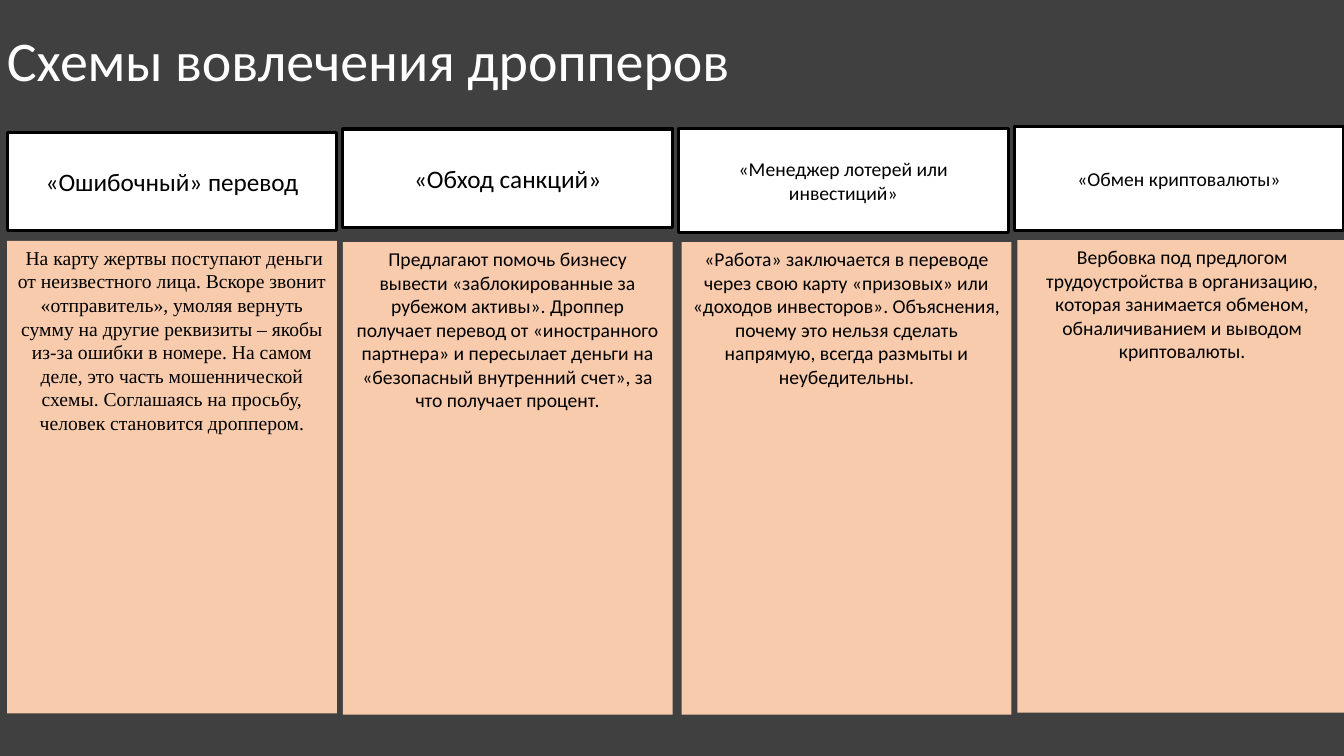
from dataclasses import dataclass

import pptx
import pptx.dml.color
import pptx.enum.shapes
import pptx.enum.text
import pptx.util

Cm = pptx.util.Cm
Pt = pptx.util.Pt
Anchor = pptx.enum.text.MSO_ANCHOR
Align = pptx.enum.text.PP_ALIGN

FIRST_LEFT = 0.18
COLUMN_PITCH = 8.46
COLUMN_WIDTH = 8.31
STORY_HEIGHT = 11.91


@dataclass
class Scheme:
    name: str
    story: str
    name_top: float
    name_height: float
    story_top: float
    name_size: int = 14
    story_shift: float = 0
    story_font: str = "Calibri"


SCHEMES = [
    Scheme(
        "«Ошибочный» перевод",
        " На карту жертвы поступают деньги от неизвестного лица. Вскоре звонит "
        "«отправитель», умоляя вернуть сумму на другие реквизиты – якобы из-за ошибки "
        "в номере. На самом деле, это часть мошеннической схемы. Соглашаясь на просьбу, "
        "человек становится дроппером.",
        3.33, 2.49, 6.07, name_size=18, story_font="Times New Roman",
    ),
    Scheme(
        "«Обход санкций»",
        "Предлагают помочь бизнесу вывести «заблокированные за рубежом активы». Дроппер "
        "получает перевод от «иностранного партнера» и пересылает деньги на «безопасный "
        "внутренний счет», за что получает процент.",
        3.25, 2.49, 6.1, name_size=18,
    ),
    Scheme(
        "«Менеджер лотерей или инвестиций»",
        "«Работа» заключается в переводе через свою карту «призовых» или «доходов "
        "инвесторов». Объяснения, почему это нельзя сделать напрямую, всегда размыты и "
        "неубедительны.",
        3.23, 2.64, 6.1, story_shift=0.08,
    ),
    Scheme(
        "«Обмен криптовалюты»",
        "Вербовка под предлогом трудоустройства в организацию, которая занимается "
        "обменом, обналичиванием и выводом криптовалюты.",
        3.18, 2.64, 6.05, story_shift=0.08,
    ),
]


def paint(color_format, color: str) -> None:
    color_format.rgb = pptx.dml.color.RGBColor.from_string(color)


def write(shape, text: str, size: int, font: str, color: str, align, anchor) -> None:
    frame = shape.text_frame
    frame.text = text
    frame.word_wrap = True
    frame.auto_size = pptx.enum.text.MSO_AUTO_SIZE.NONE
    frame.vertical_anchor = anchor
    paragraph = frame.paragraphs[0]
    paragraph.alignment = align
    for run in paragraph.runs:
        run.font.size = Pt(size)
        run.font.name = font
        paint(run.font.color, color)


def add_box(slide, left: float, top: float, height: float, fill: str):
    box = slide.shapes.add_shape(
        pptx.enum.shapes.MSO_SHAPE.RECTANGLE,
        Cm(left), Cm(top), Cm(COLUMN_WIDTH), Cm(height),
    )
    box.shadow.inherit = False
    box.fill.solid()
    paint(box.fill.fore_color, fill)
    box.line.fill.background()
    return box


def add_scheme(slide, scheme: Scheme, left: float) -> None:
    story = add_box(slide, left + scheme.story_shift, scheme.story_top, STORY_HEIGHT, "F8CBAD")
    write(story, scheme.story, 14, scheme.story_font, "000000", Align.CENTER, Anchor.TOP)

    name = add_box(slide, left, scheme.name_top, scheme.name_height, "FFFFFF")
    name.line.width = Pt(2.25)
    name.line.fill.solid()
    paint(name.line.color, "000000")
    write(name, scheme.name, scheme.name_size, "Calibri", "000000", Align.CENTER, Anchor.MIDDLE)


def main() -> None:
    deck = pptx.Presentation()
    deck.slide_width, deck.slide_height = Cm(33.87), Cm(19.05)
    slide = deck.slides.add_slide(deck.slide_layouts[5])
    slide.background.fill.solid()
    paint(slide.background.fill.fore_color, "404040")

    heading = slide.shapes.title
    heading.left, heading.top = Cm(-0.08), Cm(0.61)
    heading.width, heading.height = Cm(20.65), Cm(1.78)
    write(heading, "Схемы вовлечения дропперов", 40, "Calibri", "FFFFFF", Align.LEFT, Anchor.MIDDLE)

    for column, scheme in enumerate(SCHEMES):
        add_scheme(slide, scheme, FIRST_LEFT + column * COLUMN_PITCH)

    deck.save("out.pptx")


if __name__ == "__main__":
    main()
